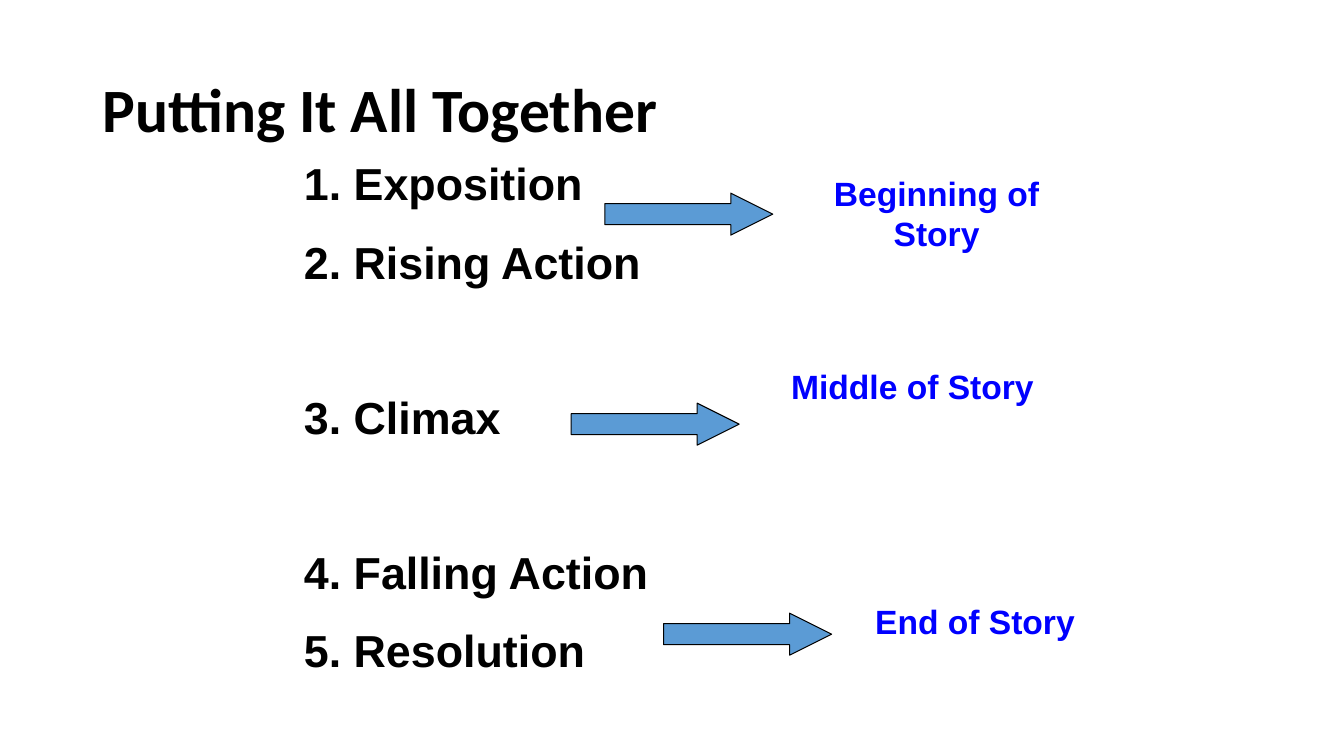
from dataclasses import dataclass

from pptx import Presentation
from pptx.dml.color import RGBColor
from pptx.enum.shapes import MSO_SHAPE as Shape
from pptx.enum.text import MSO_ANCHOR as Anchor, PP_ALIGN as Align
from pptx.util import Pt

PX = 9525


@dataclass(frozen=True)
class Theme:
    heading_font: str = "Calibri"
    body_font: str = "Arial"
    ink: RGBColor = RGBColor(0x00, 0x00, 0x00)
    label: RGBColor = RGBColor(0x00, 0x00, 0xFF)
    arrow: RGBColor = RGBColor(0x5B, 0x9B, 0xD5)
    title_size: int = 44
    stage_size: int = 32
    label_size: int = 24
    outline: float = 0.75
    stage_gap: float = 17.7
    group_gap: float = 72.2


THEME = Theme()

STORY_PARTS = [
    ("Beginning of Story", (576, 184), (776, 160, 232, 87), Align.CENTER),
    ("Middle of Story", (544, 384), (744, 344, 272, 48), Align.LEFT),
    ("End of Story", (632, 584), (824, 568, 216, 48), Align.LEFT),
]
STAGE_GROUPS = [
    ["1. Exposition", "2. Rising Action"],
    ["3. Climax"],
    ["4. Falling Action", "5. Resolution"],
]


def emu(box):
    return [length * PX for length in box]


def add_text(slide, box, lines, font, size, color):
    frame = slide.shapes.add_textbox(*emu(box)).text_frame
    frame.word_wrap = True
    frame.text = "\n".join(lines)
    for paragraph in frame.paragraphs:
        for run in paragraph.runs:
            run.font.name = font
            run.font.size = Pt(size)
            run.font.bold = True
            run.font.color.rgb = color
    return frame


def add_title(slide, box):
    title = add_text(slide, box, ["Putting It All Together"],
                     THEME.heading_font, THEME.title_size, THEME.ink)
    title.vertical_anchor = Anchor.MIDDLE
    title.paragraphs[0].line_spacing = 0.9


def add_stages(slide, box):
    names = [name for group in STAGE_GROUPS for name in group]
    stages = add_text(slide, box, names, THEME.body_font,
                      THEME.stage_size, THEME.ink)
    openers = [group[0] for group in STAGE_GROUPS]
    for stage in stages.paragraphs[1:]:
        opens_group = stage.text in openers
        stage.space_before = Pt(THEME.group_gap if opens_group else THEME.stage_gap)


def add_arrow(slide, box):
    arrow = slide.shapes.add_shape(Shape.RIGHT_ARROW, *emu(box))
    arrow.adjustments[0] = 0.5
    arrow.adjustments[1] = 1
    arrow.shadow.inherit = False
    arrow.fill.solid()
    arrow.fill.fore_color.rgb = THEME.arrow
    arrow.line.color.rgb = THEME.ink
    arrow.line.width = Pt(THEME.outline)


def add_story_part(slide, name, arrow_corner, label_box, align):
    add_arrow(slide, (*arrow_corner, 160, 40))
    label = add_text(slide, label_box, [name], THEME.body_font,
                     THEME.label_size, THEME.label)
    label.paragraphs[0].alignment = align


def main():
    deck = Presentation()
    deck.slide_width, deck.slide_height = emu((1280, 720))
    slide = deck.slides.add_slide(deck.slide_layouts[6])
    add_title(slide, (88, 38, 1104, 139))
    add_stages(slide, (280, 144, 704, 522))
    for story_part in STORY_PARTS:
        add_story_part(slide, *story_part)
    deck.save("out.pptx")


if __name__ == "__main__":
    main()
